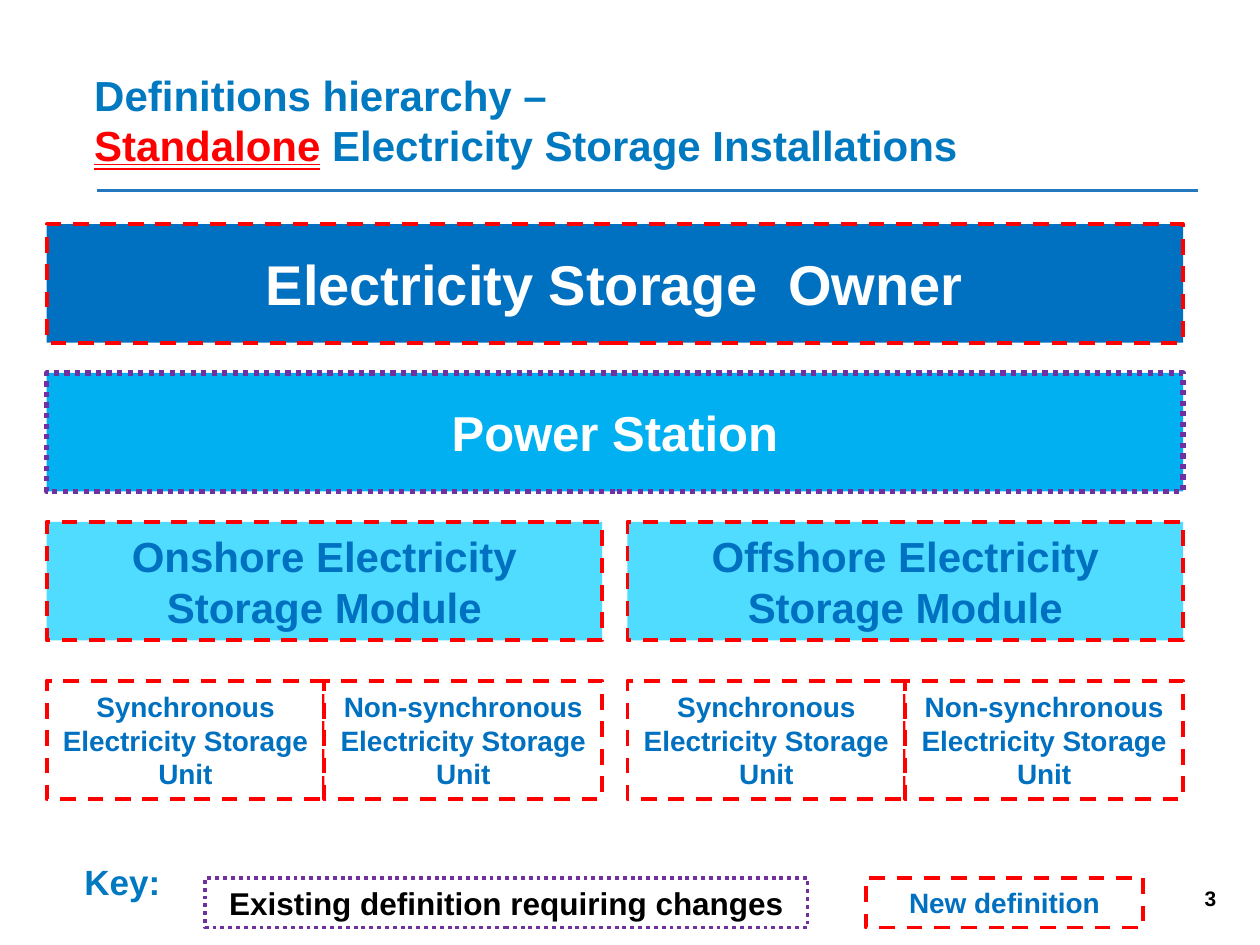
from lxml.etree import SubElement
from pptx import Presentation
from pptx.dml.color import RGBColor
from pptx.enum.dml import MSO_LINE
from pptx.enum.shapes import MSO_CONNECTOR, MSO_SHAPE
from pptx.enum.text import MSO_ANCHOR, MSO_UNDERLINE, PP_ALIGN
from pptx.oxml.ns import qn
from pptx.util import Cm, Pt

RED, PURPLE, BLUE, TITLE = "FF0000", "7030A0", "0070C0", "0079C1"
WHITE, BLACK = "FFFFFF", "000000"


def rgb(code):
    return RGBColor.from_string(code)


def write(shape, text, size=16, color=BLUE, align=PP_ALIGN.CENTER,
          anchor=MSO_ANCHOR.MIDDLE, wrap=True, under=None):
    """Add text to the first paragraph of a shape."""
    frame = shape.text_frame
    frame.word_wrap = wrap
    frame.vertical_anchor = anchor
    para = frame.paragraphs[0]
    para.alignment = align
    run = para.add_run()
    run.text = text
    font = run.font
    font.name, font.size, font.bold = "Arial", Pt(size), True
    font.color.rgb = rgb(color)
    font.underline = under


deck = Presentation()
deck.slide_width, deck.slide_height = Cm(25.4), Cm(19.05)
slide = deck.slides.add_slide(deck.slide_layouts[6])
shapes = slide.shapes

# Title and its rule
rule = shapes.add_connector(MSO_CONNECTOR.STRAIGHT,
                            Cm(1.96), Cm(3.84), Cm(24.16), Cm(3.84))
rule.line.color.rgb = rgb("2478C0")
rule.line.width = Pt(1.5)
SubElement(rule.line._get_or_add_ln().getparent(), qn("a:effectLst"))

title = shapes.add_textbox(Cm(1.65), Cm(1.24), Cm(22.48), Cm(2.31))
style = dict(size=24, align=PP_ALIGN.LEFT, anchor=MSO_ANCHOR.BOTTOM)
write(title, "Definitions hierarchy –", color=TITLE, **style)
title.text_frame.paragraphs[0].add_line_break()
write(title, "Standalone", color=RED, under=MSO_UNDERLINE.DOUBLE_LINE, **style)
write(title, " Electricity Storage Installations", color=TITLE, **style)

# Grid of the hierarchy
left, wide, half, unit = 0.94, 22.91, 11.2, 5.6
right = left + wide - half
tall, top, step = 2.39, 4.52, 3
low = 13.72

# Boxes: x, y, width, height, text, size, text colour, fill, changed
boxes = [
    (left, top, wide, tall, "Electricity Storage  Owner", 32, WHITE, BLUE, False),
    (left, top + step, wide, tall, "Power Station", 28, WHITE, "00B0F0", True),
    (4.14, 17.7, 12.14, 1, "Existing definition requiring changes",
     18, BLACK, WHITE, True),
    (17.45, 17.7, unit, 1, "New definition", 16, BLUE, WHITE, False),
]
for x, place in ((left, "Onshore"), (right, "Offshore")):
    boxes.append((x, top + 2 * step, half, tall,
                  f"{place} Electricity Storage Module",
                  24, BLUE, "4FDCFF", False))
    for i, sort in enumerate(("Synchronous", "Non-synchronous")):
        boxes.append((x + i * unit, low, unit, tall,
                      f"{sort} Electricity Storage Unit",
                      16, BLUE, WHITE, False))

for x, y, w, h, text, size, color, fill, changed in boxes:
    box = shapes.add_shape(MSO_SHAPE.RECTANGLE, Cm(x), Cm(y), Cm(w), Cm(h))
    box.shadow.inherit = False
    box.fill.solid()
    box.fill.fore_color.rgb = rgb(fill)
    box.line.color.rgb = rgb(PURPLE if changed else RED)
    box.line.width = Pt(3 if text == "Power Station" else 2.25)
    box.line.dash_style = MSO_LINE.ROUND_DOT if changed else MSO_LINE.DASH
    write(box, text, size=size, color=color)

# Key label and page number
key = shapes.add_textbox(Cm(1.45), Cm(17.22), Cm(2.06), Cm(1.12))
write(key, "Key:", size=20, color=TITLE, align=PP_ALIGN.LEFT,
      anchor=MSO_ANCHOR.TOP, wrap=False)
page = shapes.add_textbox(Cm(18.85), Cm(17.73), Cm(5.92), Cm(1.02))
write(page, "3", size=12, color=BLACK, align=PP_ALIGN.RIGHT,
      anchor=MSO_ANCHOR.TOP)

deck.save("out.pptx")
